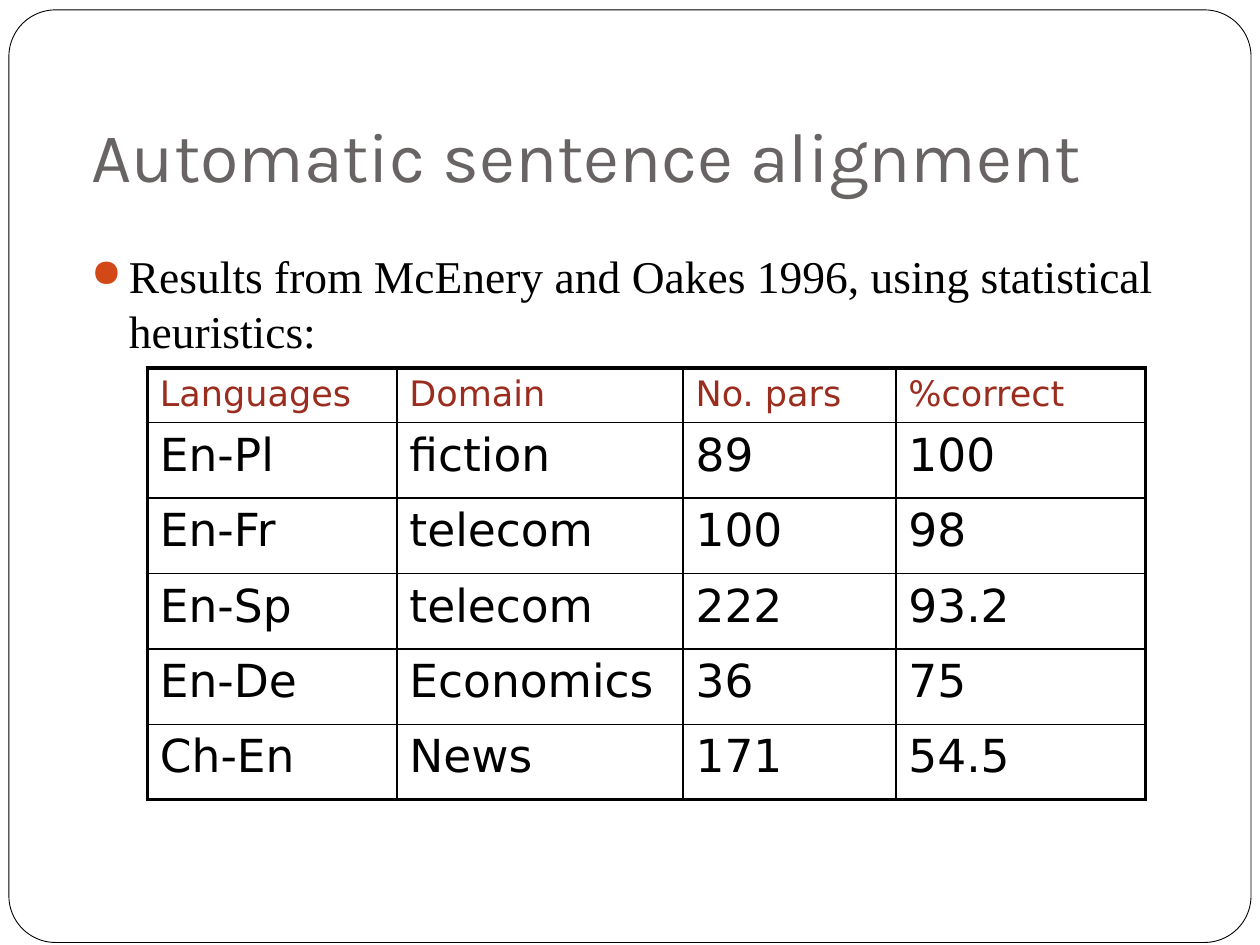
import pptx
import pptx.dml.color
import pptx.enum.shapes
import pptx.enum.text
import pptx.oxml
import pptx.oxml.ns
import pptx.util
from dataclasses import dataclass

Cm, Pt = pptx.util.Cm, pptx.util.Pt


@dataclass(frozen=True)
class Theme:
    paper: str = "FFFFFF"
    ink: str = "000000"
    title: str = "696464"
    header: str = "9B2D1F"
    bullet: str = "D34817"
    title_font: str = "Karla"
    body_font: str = "Times New Roman"
    table_font: str = "DejaVu Sans"
    title_size: float = 40
    body_size: float = 26
    header_size: float = 20
    outer_line: float = 2.25
    inner_line: float = 1


THEME = Theme()
TITLE = "Automatic sentence alignment"
BODY = "Results from McEnery and Oakes 1996, using statistical heuristics:"
RESULTS = [
    ("Languages", "Domain", "No. pars", "%correct"),
    ("En-Pl", "fiction", "89", "100"),
    ("En-Fr", "telecom", "100", "98"),
    ("En-Sp", "telecom", "222", "93.2"),
    ("En-De", "Economics", "36", "75"),
    ("Ch-En", "News", "171", "54.5"),
]
COLUMN_WIDTHS = (5.03, 5.77, 4.29, 5.03)
HEADER_HEIGHT, ROW_HEIGHT = 1.09, 1.52


def rgb(color):
    return pptx.dml.color.RGBColor.from_string(color)


def add_span(para, text, font, size, color):
    span = para.add_run()
    span.text = text
    span.font.name = font
    span.font.size = Pt(size)
    span.font.color.rgb = rgb(color)


def add_text_box(slide, left, top, width, height):
    box = slide.shapes.add_textbox(Cm(left), Cm(top), Cm(width), Cm(height))
    box.text_frame.word_wrap = True
    return box.text_frame


def add_bullet(para, indent):
    props = para._p.get_or_add_pPr()
    props.set("marL", str(Cm(indent)))
    props.set("indent", str(-Cm(indent)))
    namespace = pptx.oxml.ns.nsdecls("a")
    for markup in (
        f'<a:buClr {namespace}><a:srgbClr val="{THEME.bullet}"/></a:buClr>',
        f'<a:buSzPct {namespace} val="85000"/>',
        f'<a:buChar {namespace} char="●"/>',
    ):
        props.append(pptx.oxml.parse_xml(markup))


def set_borders(cell, widths):
    """Draw cell edges; widths maps L, R, T and B to points."""
    props = cell._tc.get_or_add_tcPr()
    namespace = pptx.oxml.ns.nsdecls("a")
    for position, side in enumerate("LRTB"):
        props.insert(position, pptx.oxml.parse_xml(
            f'<a:ln{side} {namespace} w="{Pt(widths[side])}"><a:solidFill>'
            f'<a:srgbClr val="{THEME.ink}"/></a:solidFill></a:ln{side}>'))


def add_frame(slide):
    frame = slide.shapes.add_shape(
        pptx.enum.shapes.MSO_SHAPE.ROUNDED_RECTANGLE,
        Cm(0.18), Cm(0.2), Cm(25.04), Cm(18.8))
    frame.adjustments[0] = 0.05
    frame.shadow.inherit = False
    frame.fill.solid()
    frame.fill.fore_color.rgb = rgb(THEME.paper)
    frame.line.color.rgb = rgb(THEME.ink)
    frame.line.width = Pt(0.5)


def add_results(slide):
    last_row, last_column = len(RESULTS) - 1, len(COLUMN_WIDTHS) - 1
    heights = [HEADER_HEIGHT] + [ROW_HEIGHT] * last_row
    table = slide.shapes.add_table(
        len(RESULTS), len(COLUMN_WIDTHS), Cm(2.97), Cm(7.42),
        Cm(sum(COLUMN_WIDTHS)), Cm(sum(heights))).table
    for column, width in zip(table.columns, COLUMN_WIDTHS):
        column.width = Cm(width)
    for r, (values, height) in enumerate(zip(RESULTS, heights)):
        table.rows[r].height = Cm(height)
        size, color = ((THEME.body_size, THEME.ink) if r
                       else (THEME.header_size, THEME.header))
        for c, value in enumerate(values):
            cell = table.cell(r, c)
            cell.fill.background()
            add_span(cell.text_frame.paragraphs[0], value,
                     THEME.table_font, size, color)
            on_edge = {"L": c == 0, "R": c == last_column,
                       "T": r == 0, "B": r == last_row}
            set_borders(cell, {
                side: THEME.outer_line if outer else THEME.inner_line
                for side, outer in on_edge.items()})


def main():
    deck = pptx.Presentation()
    deck.slide_width, deck.slide_height = Cm(25.4), Cm(19.05)
    slide = deck.slides.add_slide(deck.slide_layouts[6])
    add_frame(slide)

    title = add_text_box(slide, 1.6, 0.84, 22.23, 3.38)
    title.vertical_anchor = pptx.enum.text.MSO_ANCHOR.BOTTOM
    title.margin_bottom = Cm(0.25)
    add_span(title.paragraphs[0], TITLE,
             THEME.title_font, THEME.title_size, THEME.title)

    body = add_text_box(slide, 1.59, 4.88, 22.75, 11.86)
    para = body.paragraphs[0]
    para.space_before = Pt(5.8)
    add_bullet(para, 0.76)
    add_span(para, BODY, THEME.body_font, THEME.body_size, THEME.ink)

    add_results(slide)
    deck.save("out.pptx")


if __name__ == "__main__":
    main()
